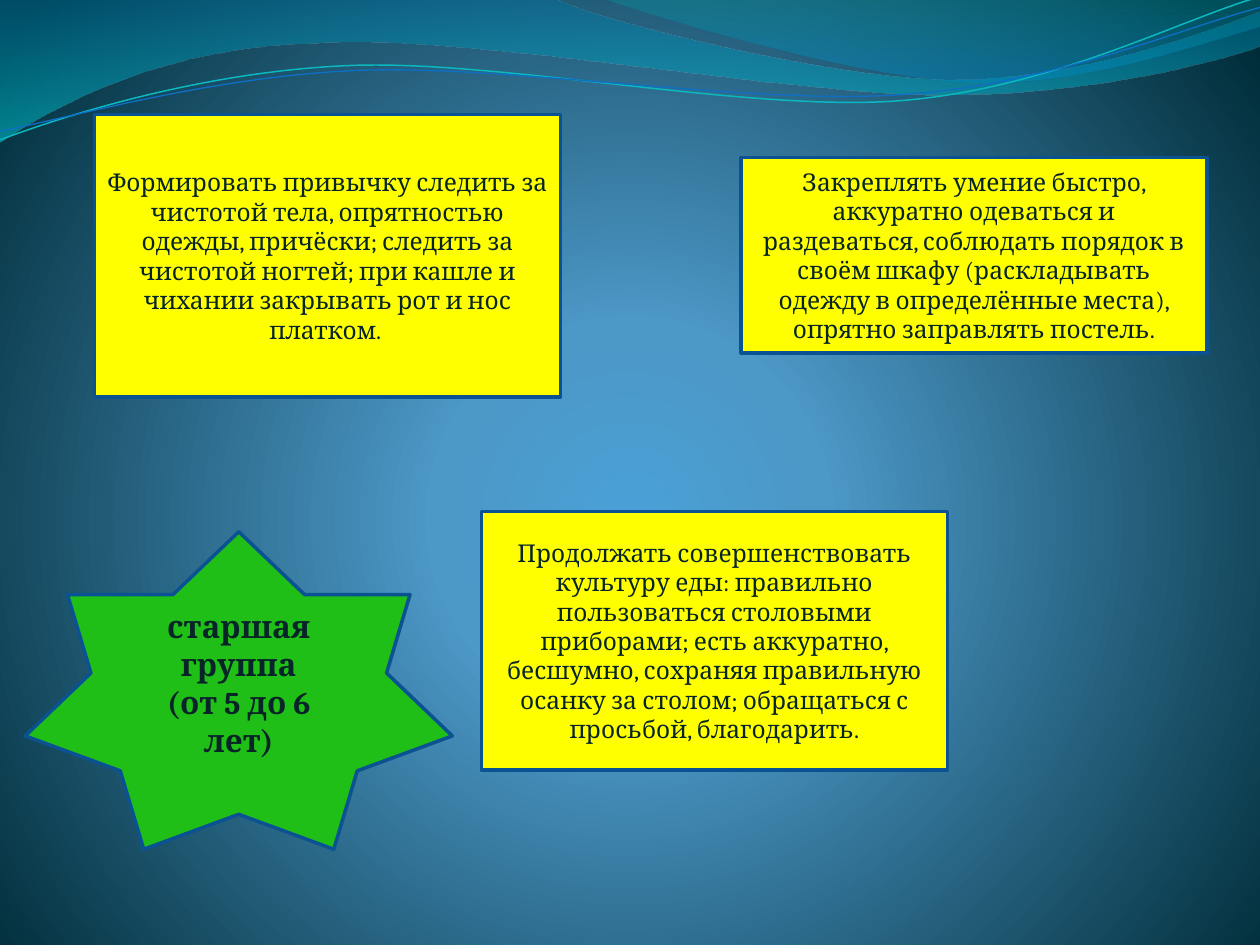
import math
from dataclasses import dataclass

from lxml import etree
from pptx import Presentation
from pptx import util as u
from pptx.dml.color import RGBColor
from pptx.enum import shapes, text
from pptx.oxml.ns import qn


@dataclass(frozen=True)
class Theme:
    """Colours, font and type sizes of the slide."""

    font: str = "Cambria"
    ink: str = "072428"
    outline: str = "0B5292"
    card: str = "FFFF00"
    star: str = "1FBF17"
    teal_line: str = "0AB8BF"
    blue_line: str = "0F6FC6"
    background: tuple = ((0, "4AA0D6", 100), (25, "4C98C7", 100), (100, "002C38", 100))
    wide_wave: tuple = ((0, "0074A1", 45), (100, "00C6CF", 55))
    right_wave: tuple = ((0, "00A1A9", 30), (80, "008BBF", 45))
    body_size: int = 14
    star_size: int = 18
    border: float = 2
    tilt: float = 2.7


def turn(point, center, degrees):
    """Rotate a point clockwise about a center."""
    angle = math.radians(degrees)
    x, y = point[0] - center[0], point[1] - center[1]
    return (center[0] + x * math.cos(angle) - y * math.sin(angle),
            center[1] + x * math.sin(angle) + y * math.cos(angle))


class SlideBuilder:
    """Draws styled elements on the current slide."""

    def __init__(self, slide, theme):
        self.slide = slide
        self.theme = theme

    def gradient(self, fill, owner, stops):
        """Fill with a gradient and return its element, ready for a direction."""
        fill.gradient()
        element = owner.find(".//" + qn("a:gradFill"))
        element.clear()
        element.set("rotWithShape", "1")
        stop_list = etree.SubElement(element, qn("a:gsLst"))
        for position, color, opacity in stops:
            stop = etree.SubElement(stop_list, qn("a:gs"), pos=str(position * 1000))
            value = etree.SubElement(stop, qn("a:srgbClr"), val=color)
            if opacity < 100:
                etree.SubElement(value, qn("a:alpha"), val=str(opacity * 1000))
        return element

    def background(self):
        """Paint the radial background."""
        element = self.gradient(self.slide.background.fill, self.slide.element, self.theme.background)
        path = etree.SubElement(element, qn("a:path"), path="circle")
        etree.SubElement(path, qn("a:fillToRect"), l="10000", t="110000", r="10000", b="100000")

    def outline(self, segments, close):
        """Build a freeform from segments of one point (line) or three points (cubic curve)."""
        start, *points = [(u.Inches(x), u.Inches(y)) for segment in segments for x, y in segment]
        builder = self.slide.shapes.build_freeform(*start)
        builder.add_line_segments(points, close=close)
        shape = builder.convert_to_shape()
        shape.shadow.inherit = False
        steps = iter(shape.element.findall(".//" + qn("a:lnTo")))
        for segment in segments[1:]:
            parts = [next(steps) for _ in segment]
            if len(parts) == 3:
                curve = etree.Element(qn("a:cubicBezTo"))
                parts[0].addprevious(curve)
                for part in parts:
                    curve.append(part[0])
                    part.getparent().remove(part)
        return shape

    def wave(self, segments, stops):
        """Draw a translucent wave shaded from top to bottom."""
        shape = self.outline(segments, True)
        shape.line.fill.background()
        element = self.gradient(shape.fill, shape.element, stops)
        etree.SubElement(element, qn("a:lin"), ang="5400000", scaled="0")

    def ripple(self, segments, center, color, width):
        """Draw a thin curved line, tilted about its center."""
        tilt = self.theme.tilt
        level = [[turn(point, center, tilt) for point in segment] for segment in segments]
        shape = self.outline(level, False)
        shape.rotation = 360 - tilt
        shape.fill.background()
        self.stroke(shape, color, width)

    def stroke(self, shape, color, width):
        """Set a solid line."""
        shape.line.color.rgb = RGBColor.from_string(color)
        shape.line.width = u.Pt(width)

    def label(self, kind, box, paragraphs, fill, size, bold=False):
        """Draw a preset shape with centred text."""
        theme = self.theme
        shape = self.slide.shapes.add_shape(kind, *map(u.Inches, box))
        shape.shadow.inherit = False
        shape.fill.solid()
        shape.fill.fore_color.rgb = RGBColor.from_string(fill)
        self.stroke(shape, theme.outline, theme.border)
        frame = shape.text_frame
        frame.word_wrap = True
        frame.vertical_anchor = text.MSO_ANCHOR.MIDDLE
        frame.text = "\n".join(paragraphs)
        for paragraph in frame.paragraphs:
            paragraph.alignment = text.PP_ALIGN.CENTER
            paragraph.font.name = theme.font
            paragraph.font.size = u.Pt(size)
            paragraph.font.bold = bold
            paragraph.font.color.rgb = RGBColor.from_string(theme.ink)

    def card(self, left, top, height, wording):
        """Draw a yellow card of the common width."""
        self.label(shapes.MSO_SHAPE.RECTANGLE, (left, top, 3.7, height), [wording],
                   self.theme.card, self.theme.body_size)


def main():
    """Build and save the slide."""
    theme = Theme()
    presentation = Presentation()
    presentation.slide_width = u.Inches(10)
    presentation.slide_height = u.Inches(7.5)
    builder = SlideBuilder(presentation.slides.add_slide(presentation.slide_layouts[6]), theme)

    builder.background()
    builder.wave([
        [(0, 0)], [(4.4, -0.01)],
        [(4.76, 0.17), (6.64, 0.63), (7.58, 0.63)],
        [(8.53, 0.63), (9.58, 0.26), (10, 0.09)],
        [(10.01, 0.36)],
        [(9.83, 0.44), (8.7, 0.76), (7.46, 0.75)],
        [(6.22, 0.75), (3.82, 0.28), (2.57, 0.34)],
        [(1.29, 0.36), (0.46, 0.83), (-0.01, 1.13)],
        [(0, 0)]], theme.wide_wave)
    builder.wave([
        [(4.79, -0.01)],
        [(5.09, 0.11), (6.82, 0.62), (7.69, 0.65)],
        [(8.56, 0.69), (9.61, 0.32), (10, 0.21)],
        [(10, 0)], [(4.79, -0.01)]], theme.right_wave)
    builder.ripple([
        [(0, 1.11)],
        [(0.48, 0.93), (1.58, 0.57), (2.77, 0.52)],
        [(3.95, 0.47), (5.93, 0.89), (7.13, 0.8)],
        [(8.33, 0.71), (9.38, 0.15), (9.98, -0.02)]], (4.99, 0.58), theme.teal_line, 0.85)
    builder.ripple([
        [(0, 1.04)],
        [(0.47, 0.96), (1.64, 0.61), (2.83, 0.56)],
        [(4.03, 0.51), (5.97, 0.84), (7.17, 0.75)],
        [(8.36, 0.67), (9.41, 0.21), (10, 0.06)]], (5, 0.59), theme.blue_line, 0.75)

    builder.label(shapes.MSO_SHAPE.STAR_7_POINT, (0.2, 4.22, 3.39, 2.52),
                  ["старшая группа", "(от 5 до 6 лет)"], theme.star, theme.star_size, bold=True)
    builder.card(0.75, 0.91, 2.24,
                 "Формировать привычку следить за чистотой тела, опрятностью одежды, причёски; "
                 "следить за чистотой ногтей; при кашле и чихании закрывать рот и нос платком. ")
    builder.card(5.88, 1.25, 1.55,
                 "Закреплять умение быстро, аккуратно одеваться и раздеваться, соблюдать порядок "
                 "в своём шкафу (раскладывать одежду в определённые места), опрятно заправлять постель.")
    builder.card(3.82, 4.06, 2.05,
                 "Продолжать совершенствовать культуру еды: правильно пользоваться столовыми "
                 "приборами; есть аккуратно, бесшумно, сохраняя правильную осанку за столом; "
                 "обращаться с просьбой, благодарить.")
    presentation.save("out.pptx")


if __name__ == "__main__":
    main()
